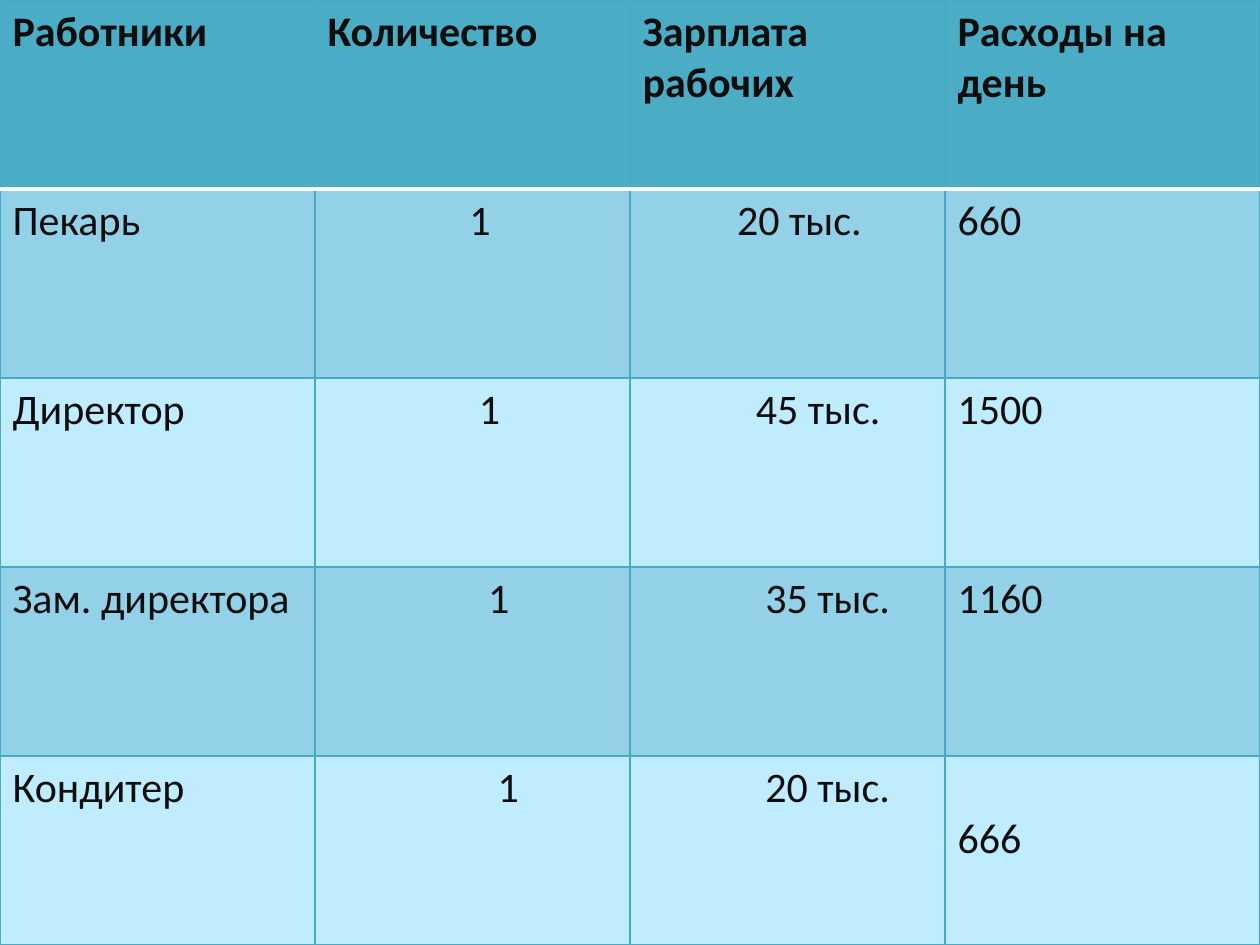
from lxml import etree
from pptx import Presentation
from pptx import util as u
from pptx.dml.color import RGBColor
from pptx.oxml import ns

THEME = {
    "font": "Calibri", "size": 24, "text": "0D0D0D",
    "header": "4BACC6", "bands": ("92D1E8", "BFECFF"),
    "grid": ("46AAC5", 0.75), "rule": ("FFFFFF", 2),
}
SPACE = 0.075  # indent step, inches
LINE = 0.41    # height of one text line, inches

HEADER = ("Работники", "Количество", "Зарплата рабочих", "Расходы на день")
STAFF = (
    ("Пекарь", "1", "20 тыс.", "660"),
    ("Директор", "1", "45 тыс.", "1500"),
    ("Зам. директора", "1", "35 тыс.", "1160"),
    ("Кондитер", "1", "20 тыс.", "666"),
)
# Indent steps of each staff row, by column
INDENTS = ((0, 15, 10, 0), (0, 16, 12, 0), (0, 17, 13, 0), (0, 18, 13, 0))


def add_border(cell, side, color, width):
    ln = etree.SubElement(cell._tc.get_or_add_tcPr(), ns.qn("a:ln" + side),
                          w=str(int(u.Pt(width))))
    fill = etree.SubElement(ln, ns.qn("a:solidFill"))
    etree.SubElement(fill, ns.qn("a:srgbClr"), val=color)


prs = Presentation()
prs.slide_width, prs.slide_height = u.Inches(10), u.Inches(7.5)
s = prs.slides.add_slide(prs.slide_layouts[6])

# Table over the whole slide, in equal columns and rows
rows = (HEADER,) + STAFF
tbl = s.shapes.add_table(len(rows), len(HEADER), 0, 0,
                         prs.slide_width, prs.slide_height).table
for col in tbl.columns:
    col.width = prs.slide_width // len(HEADER)
for row in tbl.rows:
    row.height = prs.slide_height // len(rows)

for i, row in enumerate(rows):
    for j, value in enumerate(row):
        cell = tbl.cell(i, j)

        # Borders, with a white rule under the header
        for side in "LRTB":
            under_header = (i, side) in ((0, "B"), (1, "T"))
            add_border(cell, side, *THEME["rule" if under_header else "grid"])

        # Header fill or banded fill
        color = THEME["bands"][(i - 1) % 2] if i else THEME["header"]
        cell.fill.solid()
        cell.fill.fore_color.rgb = RGBColor.from_string(color)

        # Text
        steps = INDENTS[i - 1][j] if i else 0
        cell.margin_left = u.Inches(0.1 + steps * SPACE)
        cell.text = value
        p = cell.text_frame.paragraphs[0]
        p.font.name = THEME["font"]
        p.font.size = u.Pt(THEME["size"])
        p.font.bold = i == 0
        p.font.color.rgb = RGBColor.from_string(THEME["text"])

# The last amount sits one line lower
tbl.cell(len(rows) - 1, len(HEADER) - 1).margin_top = u.Inches(0.05 + LINE)

prs.save("out.pptx")
